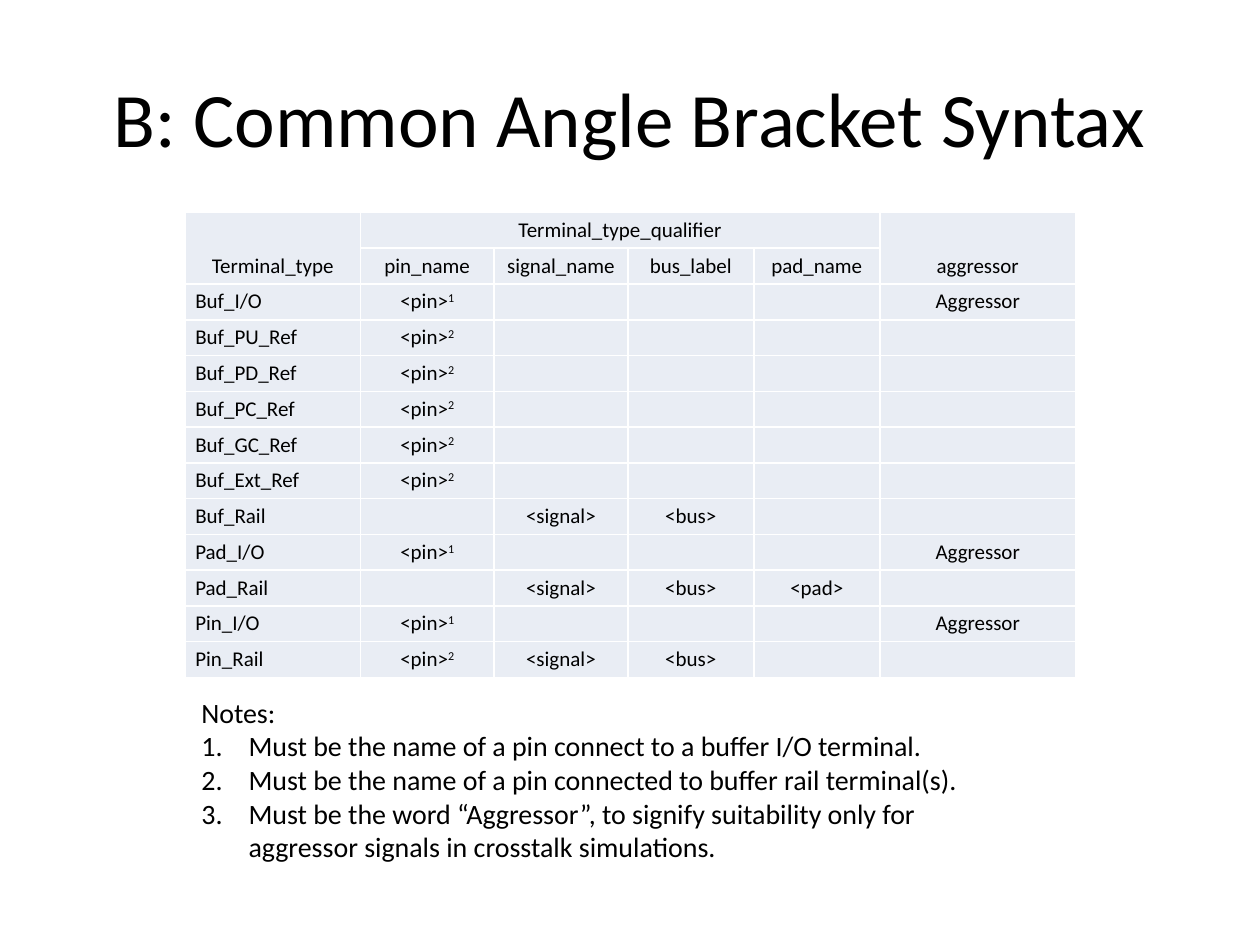
import pptx
import pptx.util
import pptx.dml.color
import pptx.enum.text
from lxml import etree
from pptx.oxml.ns import qn

Pt = pptx.util.Pt
ALIGN = pptx.enum.text.PP_ALIGN
ANCHOR = pptx.enum.text.MSO_ANCHOR

COLORS = {"text": "000000", "cell": "E9EDF4"}
FONT = "Calibri"

TITLE = "B: Common Angle Bracket Syntax"
HEADER = [
    ["Terminal_type", "Terminal_type_qualifier", "", "", "", "aggressor"],
    ["", "pin_name", "signal_name", "bus_label", "pad_name", ""],
]
# terminal type, pin footnote, signal, bus, pad, aggressor
TERMINALS = [
    ("Buf_I/O", "1", "", "", "", "Aggressor"),
    ("Buf_PU_Ref", "2", "", "", "", ""),
    ("Buf_PD_Ref", "2", "", "", "", ""),
    ("Buf_PC_Ref", "2", "", "", "", ""),
    ("Buf_GC_Ref", "2", "", "", "", ""),
    ("Buf_Ext_Ref", "2", "", "", "", ""),
    ("Buf_Rail", "", "<signal>", "<bus>", "", ""),
    ("Pad_I/O", "1", "", "", "", "Aggressor"),
    ("Pad_Rail", "", "<signal>", "<bus>", "<pad>", ""),
    ("Pin_I/O", "1", "", "", "", "Aggressor"),
    ("Pin_Rail", "2", "<signal>", "<bus>", "", ""),
]
SPANS = [((0, 0), (1, 0)), ((0, 1), (0, 4)), ((0, 5), (1, 5))]
NOTES_HEADING = "Notes:"
NOTES = [
    "Must be the name of a pin connect to a buffer I/O terminal.",
    "Must be the name of a pin connected to buffer rail terminal(s).",
    "Must be the word “Aggressor”, to signify suitability only for\v"
    "aggressor signals in crosstalk simulations.",
]

TITLE_BOX = (36, 21.6, 648, 90)
TABLE_AT = (105.84, 121.4)
COLUMN_WIDTHS = [100.1, 76.4, 76.4, 72, 72, 112]
ROW_HEIGHT = 20.45
NOTES_BOX = (108, 393.8, 452, 104.4)
NOTE_INDENT = 27

CELL_FORMAT = {"margin_left": Pt(5.76), "margin_right": Pt(5.76),
               "margin_top": Pt(2.88), "margin_bottom": Pt(2.88)}
TABLE_FORMAT = {"first_row": False, "horz_banding": False}


def apply(target, values):
    for name, value in values.items():
        setattr(target, name, value)


def color(name):
    return pptx.dml.color.RGBColor.from_string(COLORS[name])


def style_runs(paragraph, size):
    for run in paragraph.runs:
        apply(run.font, {"size": Pt(size), "name": FONT})
        run.font.color.rgb = color("text")
    # Line breaks and empty paragraphs take their height from their own size.
    for line_break in paragraph._p.findall(qn("a:br")):
        etree.SubElement(line_break, qn("a:rPr"), sz=str(size * 100))
    etree.SubElement(paragraph._p, qn("a:endParaRPr"), sz=str(size * 100))


def number(paragraph):
    properties = paragraph._p.get_or_add_pPr()
    properties.set("marL", str(Pt(NOTE_INDENT)))
    properties.set("indent", str(-Pt(NOTE_INDENT)))
    etree.SubElement(properties, qn("a:buFont"), typeface="+mj-lt")
    etree.SubElement(properties, qn("a:buAutoNum"), type="arabicPeriod")


def add_title(slide):
    frame = slide.shapes.add_textbox(*map(Pt, TITLE_BOX)).text_frame
    apply(frame, {"word_wrap": True, "vertical_anchor": ANCHOR.MIDDLE})
    paragraph = frame.paragraphs[0]
    apply(paragraph, {"text": TITLE, "alignment": ALIGN.CENTER})
    style_runs(paragraph, 44)


def fill_cell(cell, text, footnote, alignment):
    apply(cell, CELL_FORMAT)
    cell.fill.solid()
    cell.fill.fore_color.rgb = color("cell")
    paragraph = cell.text_frame.paragraphs[0]
    apply(paragraph, {"alignment": alignment, "space_after": Pt(4)})
    if text:
        paragraph.add_run().text = text
    if footnote:
        mark = paragraph.add_run()
        mark.text = footnote
        mark.font._element.set("baseline", "30000")
    style_runs(paragraph, 12)


def add_terminal_table(slide):
    rows = HEADER + TERMINALS
    size = (sum(COLUMN_WIDTHS), ROW_HEIGHT * len(rows))
    table = slide.shapes.add_table(
        len(rows), len(COLUMN_WIDTHS), *map(Pt, TABLE_AT + size)).table
    apply(table, TABLE_FORMAT)
    for column, width in zip(table.columns, COLUMN_WIDTHS):
        column.width = Pt(width)
    for r, values in enumerate(rows):
        table.rows[r].height = Pt(ROW_HEIGHT)
        is_header = r < len(HEADER)
        for c, text in enumerate(values):
            footnote = ""
            if c == 1 and text and not is_header:
                text, footnote = "<pin>", text
            left = c == 0 and not is_header
            fill_cell(table.cell(r, c), text, footnote,
                      ALIGN.LEFT if left else ALIGN.CENTER)
    for first, last in SPANS:
        table.cell(*first).merge(table.cell(*last))
        if last[0] > first[0]:
            table.cell(*first).vertical_anchor = ANCHOR.BOTTOM


def add_notes(slide):
    frame = slide.shapes.add_textbox(*map(Pt, NOTES_BOX)).text_frame
    apply(frame, {"word_wrap": False,
                  "auto_size": pptx.enum.text.MSO_AUTO_SIZE.SHAPE_TO_FIT_TEXT})
    heading = frame.paragraphs[0]
    heading.text = NOTES_HEADING
    style_runs(heading, 16)
    for note in NOTES:
        paragraph = frame.add_paragraph()
        paragraph.text = note
        number(paragraph)
        style_runs(paragraph, 16)


def main():
    deck = pptx.Presentation()
    apply(deck, {"slide_width": Pt(720), "slide_height": Pt(540)})
    slide = deck.slides.add_slide(deck.slide_layouts[6])
    add_title(slide)
    add_terminal_table(slide)
    add_notes(slide)
    deck.save("out.pptx")


if __name__ == "__main__":
    main()
